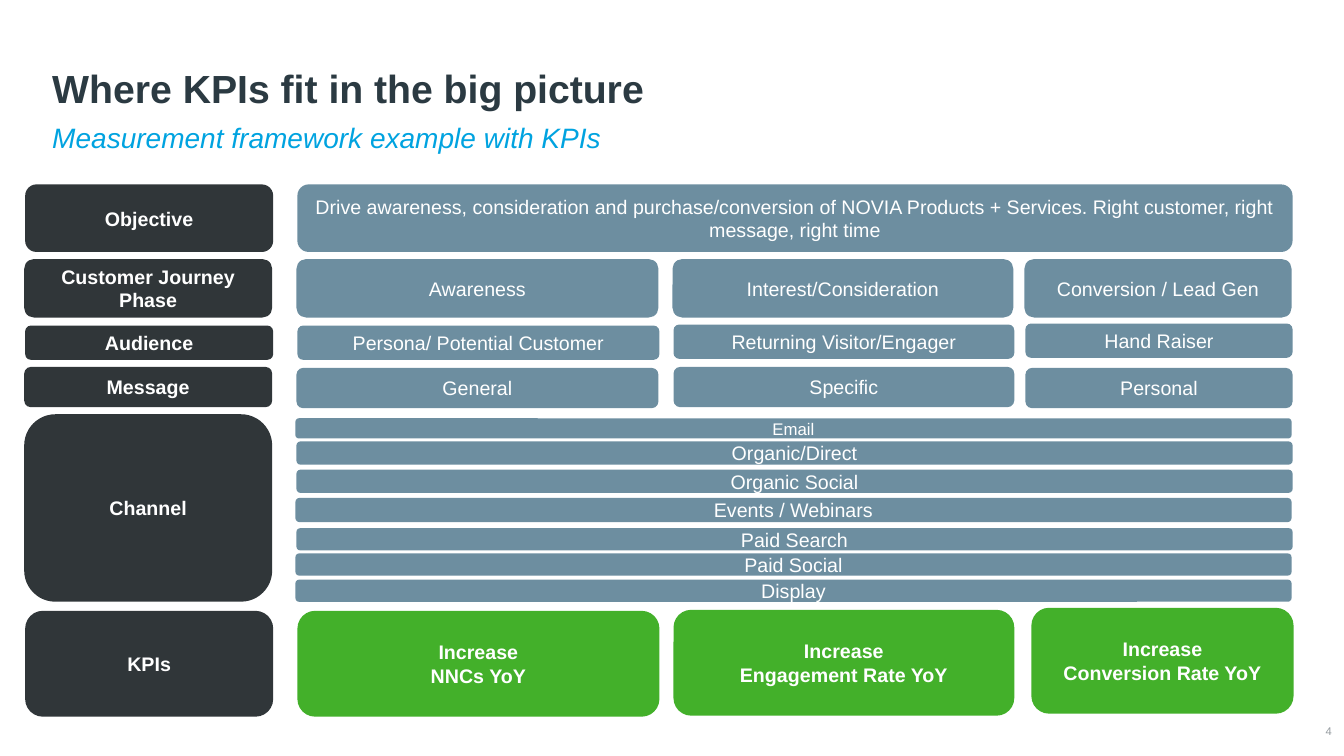
from pptx import Presentation
from pptx.dml.color import RGBColor
from pptx.enum.shapes import MSO_SHAPE
from pptx.enum.text import MSO_ANCHOR, PP_ALIGN
from pptx.util import Inches, Pt

ROUNDED = MSO_SHAPE.ROUNDED_RECTANGLE
TOP, MIDDLE, BOTTOM = MSO_ANCHOR.TOP, MSO_ANCHOR.MIDDLE, MSO_ANCHOR.BOTTOM
LEFT, CENTER, RIGHT = PP_ALIGN.LEFT, PP_ALIGN.CENTER, PP_ALIGN.RIGHT

WHITE = RGBColor(0xFF, 0xFF, 0xFF)
NAVY = RGBColor(0x2B, 0x3A, 0x42)
CYAN = RGBColor(0x00, 0xA3, 0xE0)
GRAY = RGBColor(0x95, 0x9C, 0xA0)
CHARCOAL = RGBColor(0x30, 0x36, 0x39)
SLATE = RGBColor(0x6D, 0x8E, 0xA0)
GREEN = RGBColor(0x43, 0xB0, 0x2A)

deck = Presentation()
deck.slide_width, deck.slide_height = Inches(13.33), Inches(7.5)
page = deck.slides.add_slide(deck.slide_layouts[6])


def write(box, text, size, color, align, anchor, bold=False, italic=False, spacing=1.0):
    frame = box.text_frame
    frame.word_wrap = True
    frame.vertical_anchor = anchor
    frame.text = text
    for para in frame.paragraphs:
        para.alignment = align
        para.line_spacing = spacing
        for span in para.runs:
            span.font.name = "Arial"
            span.font.size = Pt(size)
            span.font.color.rgb = color
            span.font.bold = bold
            span.font.italic = italic


def add_block(text, left, top, width, height, fill, bold=False, size=14):
    block = page.shapes.add_shape(
        ROUNDED, Inches(left), Inches(top), Inches(width), Inches(height))
    block.shadow.inherit = False
    block.fill.solid()
    block.fill.fore_color.rgb = fill
    block.line.fill.background()
    write(block, text, size, WHITE, CENTER, MIDDLE, bold)


# Title, subtitle and page number
title = page.shapes.add_textbox(Inches(0.42), Inches(0.32), Inches(12.4), Inches(0.84))
write(title, "Where KPIs fit in the big picture", 28, NAVY, LEFT, BOTTOM,
      bold=True, spacing=0.9)
subtitle = page.shapes.add_textbox(Inches(0.42), Inches(1.18), Inches(12.4), Inches(0.44))
write(subtitle, "Measurement framework example with KPIs", 20, CYAN, LEFT, TOP,
      italic=True, spacing=0.9)
number = page.shapes.add_textbox(Inches(12.82), Inches(7.16), Inches(0.39), Inches(0.19))
number.text_frame.margin_left = number.text_frame.margin_right = 0
number.text_frame.margin_top = number.text_frame.margin_bottom = 0
write(number, "4", 8, GRAY, RIGHT, MIDDLE)

# Row labels: text, left, top, height
row_labels = [
    ("Objective", 0.25, 1.83, 0.67),
    ("Customer Journey Phase", 0.24, 2.57, 0.58),
    ("Audience", 0.25, 3.23, 0.34),
    ("Message", 0.24, 3.64, 0.4),
    ("Channel", 0.24, 4.11, 1.86),
    ("KPIs", 0.25, 6.06, 1.05),
]
for text, left, top, height in row_labels:
    add_block(text, left, top, 2.46, height, CHARCOAL, bold=True)

# Objective
add_block("Drive awareness, consideration and purchase/conversion of NOVIA Products"
          " + Services. Right customer, right message, right time",
          2.95, 1.83, 9.87, 0.67, SLATE)

# Three-stage rows: height, fill, bold, then text, left and top of each stage
stage_widths = [3.59, 3.38, 2.65]
stage_rows = [
    (0.58, SLATE, False, [("Awareness", 2.94, 2.57),
                          ("Interest/Consideration", 6.67, 2.57),
                          ("Conversion / Lead Gen", 10.16, 2.57)]),
    (0.34, SLATE, False, [("Persona/ Potential Customer", 2.95, 3.23),
                          ("Returning Visitor/Engager", 6.68, 3.22),
                          ("Hand Raiser", 10.17, 3.21)]),
    (0.4, SLATE, False, [("General", 2.94, 3.65),
                         ("Specific", 6.68, 3.64),
                         ("Personal", 10.17, 3.65)]),
    (1.05, GREEN, True, [("Increase\nNNCs YoY", 2.95, 6.06),
                         ("Increase\nEngagement Rate YoY", 6.68, 6.05),
                         ("Increase\nConversion Rate YoY", 10.23, 6.03)]),
]
for height, fill, bold, stages in stage_rows:
    for (text, left, top), width in zip(stages, stage_widths):
        right_edge = min(left + width, 12.83)
        add_block(text, left, top, right_edge - left, height, fill, bold)

# Channel bars: text, left, top, height, text size
channels = [
    ("Email", 2.93, 4.15, 0.2, 12),
    ("Organic/Direct", 2.94, 4.38, 0.23, 14),
    ("Organic Social", 2.94, 4.66, 0.23, 14),
    ("Events / Webinars", 2.93, 4.94, 0.24, 14),
    ("Paid Search", 2.94, 5.24, 0.22, 14),
    ("Paid Social", 2.93, 5.49, 0.22, 14),
    ("Display", 2.93, 5.75, 0.22, 14),
]
for text, left, top, height, size in channels:
    add_block(text, left, top, 9.88, height, SLATE, size=size)

deck.save("out.pptx")
